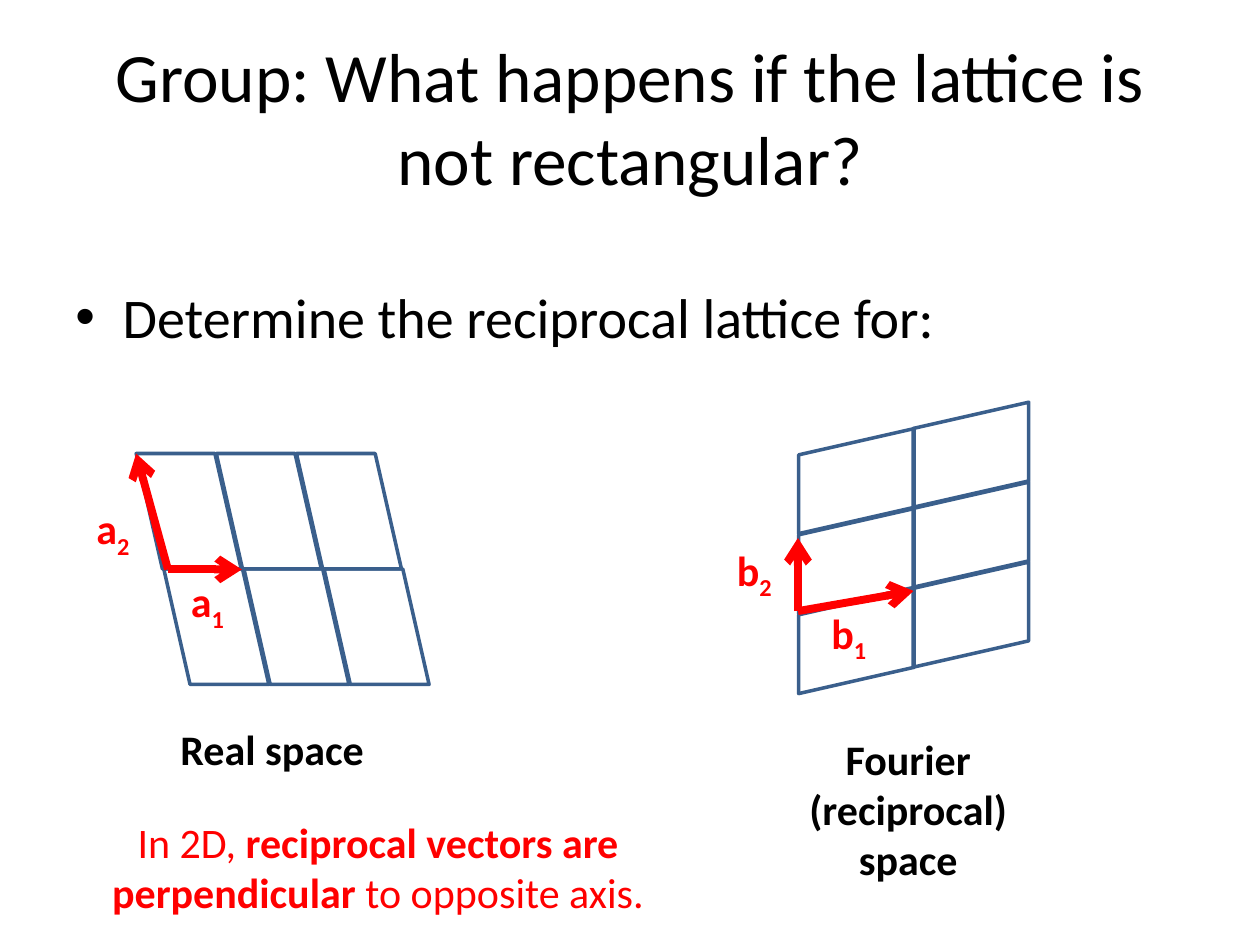
from lxml import etree
from pptx import Presentation
from pptx.dml.color import RGBColor
from pptx.enum import shapes, text
from pptx.oxml import ns
from pptx.util import Pt

BLACK = RGBColor(0x00, 0x00, 0x00)
RED = RGBColor(0xFF, 0x00, 0x00)
BLUE = RGBColor(0x3A, 0x5F, 0x8C)
LEFT, CENTER = text.PP_ALIGN.LEFT, text.PP_ALIGN.CENTER

TITLE = "Group: What happens if the lattice is not rectangular?"
BULLET = "Determine the reciprocal lattice for:"
CELL = (60, 66)
# origin, step per column, step per row, columns, rows, rotation
LATTICES = [
    ((77.8, 259.2), (45.8, 0), (15.8, 66), 3, 2, 0),
    ((459.4, 241.9), (65.5, -15.1), (0, 45.7), 2, 3, 90),
]
VECTORS = [  # from, to
    ((96, 325.4), (138.2, 325.4)),
    ((96, 325.4), (77.8, 259.2)),
    ((456, 349.2), (456, 307.4)),
    ((456, 349.2), (522, 337.7)),
]
VECTOR_LABELS = [  # letter, subscript, left, top
    ("a", "1", 102, 325.4),
    ("a", "2", 48, 283.7),
    ("b", "1", 468, 343.4),
    ("b", "2", 414, 307.4),
]
CAPTIONS = [  # box, alignment, colour, runs of (text, bold)
    ((96, 409.7, 120, 36), LEFT, BLACK, [("Real space", True)]),
    ((426, 415.4, 186, 94.3), CENTER, BLACK, [("Fourier (reciprocal) space", True)]),
    ((36, 463, 360, 65.5), CENTER, RED,
     [("In 2D, ", False), ("reciprocal vectors are perpendicular ", True),
      ("to opposite axis.", False)]),
]


def add_run(p, words, size, color, bold=False):
    r = p.add_run()
    r.text = words
    for name, value in dict(name="Calibri", size=Pt(size), bold=bold).items():
        setattr(r.font, name, value)
    r.font.color.rgb = color
    return r


def add_text(s, box, runs, color, align=LEFT, size=24):
    tf = s.shapes.add_textbox(*map(Pt, box)).text_frame
    tf.word_wrap = True
    tf.auto_size = text.MSO_AUTO_SIZE.SHAPE_TO_FIT_TEXT
    p = tf.paragraphs[0]
    p.alignment = align
    for words, bold in runs:
        add_run(p, words, size, color, bold)
    return p


def add_title(s):
    title = s.shapes.title
    box = dict(left=36, top=21.6, width=648, height=90)
    for name, value in box.items():
        setattr(title, name, Pt(value))
    tf = title.text_frame
    tf.auto_size = text.MSO_AUTO_SIZE.NONE
    tf.vertical_anchor = text.MSO_ANCHOR.MIDDLE
    tf.paragraphs[0].alignment = CENTER
    add_run(tf.paragraphs[0], TITLE, 39.6, BLACK)


def add_bullet(s):
    p = add_text(s, (36, 157.7, 648, 113.8), [(BULLET, False)], BLACK, size=32)
    p.space_before = Pt(6.4)
    pPr = p._p.get_or_add_pPr()
    pPr.set("marL", str(Pt(27)))
    pPr.set("indent", str(Pt(-27)))
    etree.SubElement(pPr, ns.qn("a:buFont")).set("typeface", "Arial")
    etree.SubElement(pPr, ns.qn("a:buChar")).set("char", "•")


def add_lattice(s, origin, col_step, row_step, cols, rows, rotation):
    group = s.shapes.add_group_shape()
    for row in range(rows):
        for col in range(cols):
            left, top = (o + col * c + row * r
                         for o, c, r in zip(origin, col_step, row_step))
            cell = group.shapes.add_shape(shapes.MSO_SHAPE.PARALLELOGRAM,
                                          *map(Pt, (left, top, *CELL)))
            cell.rotation = rotation
            cell._element.spPr.xfrm.set("flipV", "1")
            cell.shadow.inherit = False
            cell.fill.background()
            cell.line.color.rgb = BLUE
            cell.line.width = Pt(2)


def add_vector(s, start, end):
    arrow = s.shapes.add_connector(shapes.MSO_CONNECTOR.STRAIGHT,
                                   *map(Pt, start + end))
    arrow.line.color.rgb = RED
    arrow.line.width = Pt(4.5)
    etree.SubElement(arrow.line._get_or_add_ln(), ns.qn("a:tailEnd")).set("type", "arrow")
    etree.SubElement(arrow._element.spPr, ns.qn("a:effectLst"))


def add_vector_label(s, letter, subscript, left, top):
    p = add_text(s, (left, top, 48, 36), [(letter, True)], RED)
    r = add_run(p, subscript, 24, RED, True)
    r.font._element.set("baseline", "-25000")


def main():
    prs = Presentation()
    prs.slide_width, prs.slide_height = Pt(720), Pt(540)
    s = prs.slides.add_slide(prs.slide_layouts.get_by_name("Title Only"))
    add_title(s)
    add_bullet(s)
    for lattice in LATTICES:
        add_lattice(s, *lattice)
    for vector in VECTORS:
        add_vector(s, *vector)
    for label in VECTOR_LABELS:
        add_vector_label(s, *label)
    for box, align, color, runs in CAPTIONS:
        add_text(s, box, runs, color, align)
    prs.save("out.pptx")


if __name__ == "__main__":
    main()
